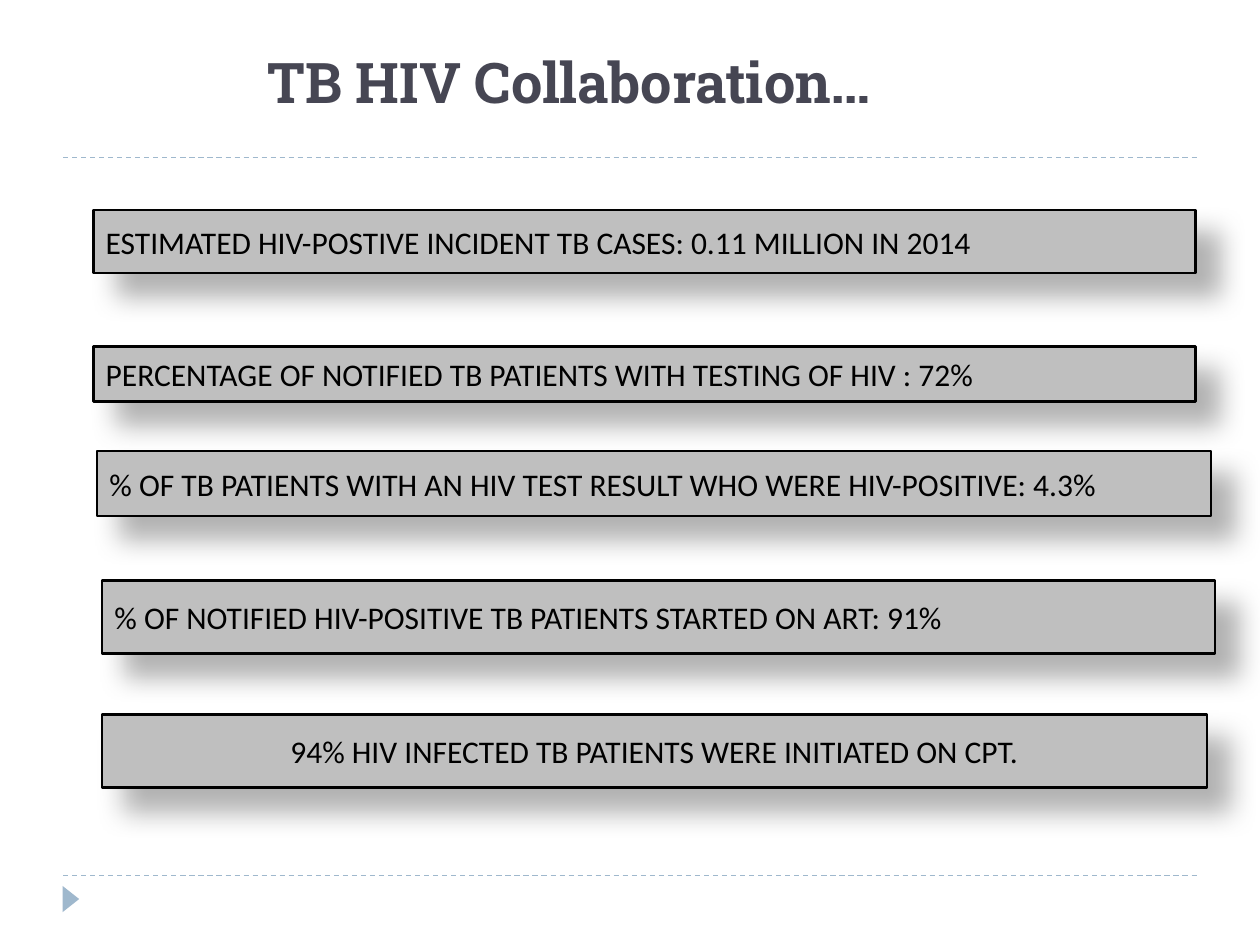
import lxml.etree
import pptx
import pptx.dml.color
import pptx.enum.dml
import pptx.enum.shapes
import pptx.enum.text
import pptx.oxml
import pptx.oxml.ns
import pptx.util
from dataclasses import dataclass

Pt = pptx.util.Pt
Align = pptx.enum.text.PP_ALIGN
Anchor = pptx.enum.text.MSO_ANCHOR
Preset = pptx.enum.shapes.MSO_SHAPE


@dataclass(frozen=True)
class Theme:
    accent: str = "9FB8CD"
    bar: str = "BFBFBF"
    ink: str = "000000"
    title: str = "464653"
    title_font: str = "Roboto Slab"
    body_font: str = "Calibri"
    title_size: float = 32
    body_size: float = 18


def color(value):
    return pptx.dml.color.RGBColor.from_string(value)


class SlideBuilder:
    """Draws the elements of one slide in a shared theme."""

    def __init__(self, slide, theme):
        self.slide = slide
        self.theme = theme

    def rule(self, left, right, y):
        line = self.slide.shapes.add_connector(
            pptx.enum.shapes.MSO_CONNECTOR.STRAIGHT, Pt(left), Pt(y), Pt(right), Pt(y))
        line.line.color.rgb = color(self.theme.accent)
        line.line.width = Pt(0.75)
        line.line.dash_style = pptx.enum.dml.MSO_LINE.DASH
        lxml.etree.SubElement(line._element.spPr, pptx.oxml.ns.qn("a:effectLst"))

    def shape(self, preset, box, fill):
        shape = self.slide.shapes.add_shape(preset, *map(Pt, box))
        shape.shadow.inherit = False
        shape.fill.solid()
        shape.fill.fore_color.rgb = color(fill)
        return shape

    def marker(self, box):
        triangle = self.shape(Preset.ISOSCELES_TRIANGLE, box, self.theme.accent)
        triangle.rotation = 90
        triangle.line.fill.background()

    def set_text(self, shape, text, align, anchor, font, size, ink, bold=False):
        frame = shape.text_frame
        frame.word_wrap = True
        frame.vertical_anchor = anchor
        paragraph = frame.paragraphs[0]
        paragraph.text = text
        paragraph.alignment = align
        paragraph.font.name = font
        paragraph.font.size = Pt(size)
        paragraph.font.bold = bold
        paragraph.font.color.rgb = color(ink)

    def title(self, text, box):
        shape = self.slide.shapes.add_textbox(*map(Pt, box))
        shape.text_frame.margin_bottom = 0
        self.set_text(shape, text, Align.CENTER, Anchor.BOTTOM, self.theme.title_font,
                      self.theme.title_size, self.theme.title, bold=True)

    def bar(self, text, box, align=Align.LEFT):
        shape = self.shape(Preset.RECTANGLE, box, self.theme.bar)
        shape.line.color.rgb = color(self.theme.ink)
        shape.line.width = Pt(1.5)
        self.cast_shadow(shape)
        self.set_text(shape, text, align, Anchor.MIDDLE, self.theme.body_font,
                      self.theme.body_size, self.theme.ink)

    def cast_shadow(self, shape):
        effects = shape._element.spPr.find(pptx.oxml.ns.qn("a:effectLst"))
        effects.append(pptx.oxml.parse_xml(
            f'<a:outerShdw {pptx.oxml.ns.nsdecls("a")} blurRad="{Pt(15)}" dist="{Pt(18)}" '
            f'dir="2700000" algn="tl" rotWithShape="0"><a:srgbClr val="{self.theme.ink}">'
            '<a:alpha val="30000"/></a:srgbClr></a:outerShdw>'))


def main():
    presentation = pptx.Presentation()
    presentation.slide_width, presentation.slide_height = Pt(720), Pt(540)
    slide = presentation.slides.add_slide(presentation.slide_layouts[6])
    builder = SlideBuilder(slide, Theme())

    for y in (500.4, 90):
        builder.rule(36, 684, y)
    builder.marker((33, 509, 15, 9.5))
    builder.title("TB HIV Collaboration…", (1.5, -12.25, 648, 77.75))

    bars = [
        ("ESTIMATED HIV-POSTIVE INCIDENT TB CASES: 0.11 MILLION IN 2014",
         (53.3, 120, 630, 36), Align.LEFT),
        ("PERCENTAGE OF NOTIFIED TB PATIENTS WITH TESTING OF HIV : 72%",
         (53.3, 198, 630, 31.5), Align.LEFT),
        ("% OF TB PATIENTS WITH AN HIV TEST RESULT WHO WERE HIV-POSITIVE: 4.3%",
         (55.5, 257.8, 636.5, 37), Align.LEFT),
        ("% OF NOTIFIED HIV-POSITIVE TB PATIENTS STARTED ON ART: 91%",
         (58.3, 331.8, 636, 41.8), Align.LEFT),
        ("94% HIV INFECTED TB PATIENTS WERE INITIATED ON CPT.",
         (58.3, 408.2, 631.4, 41.8), Align.CENTER),
    ]
    for text, box, align in bars:
        builder.bar(text, box, align)

    presentation.save("out.pptx")


if __name__ == "__main__":
    main()
